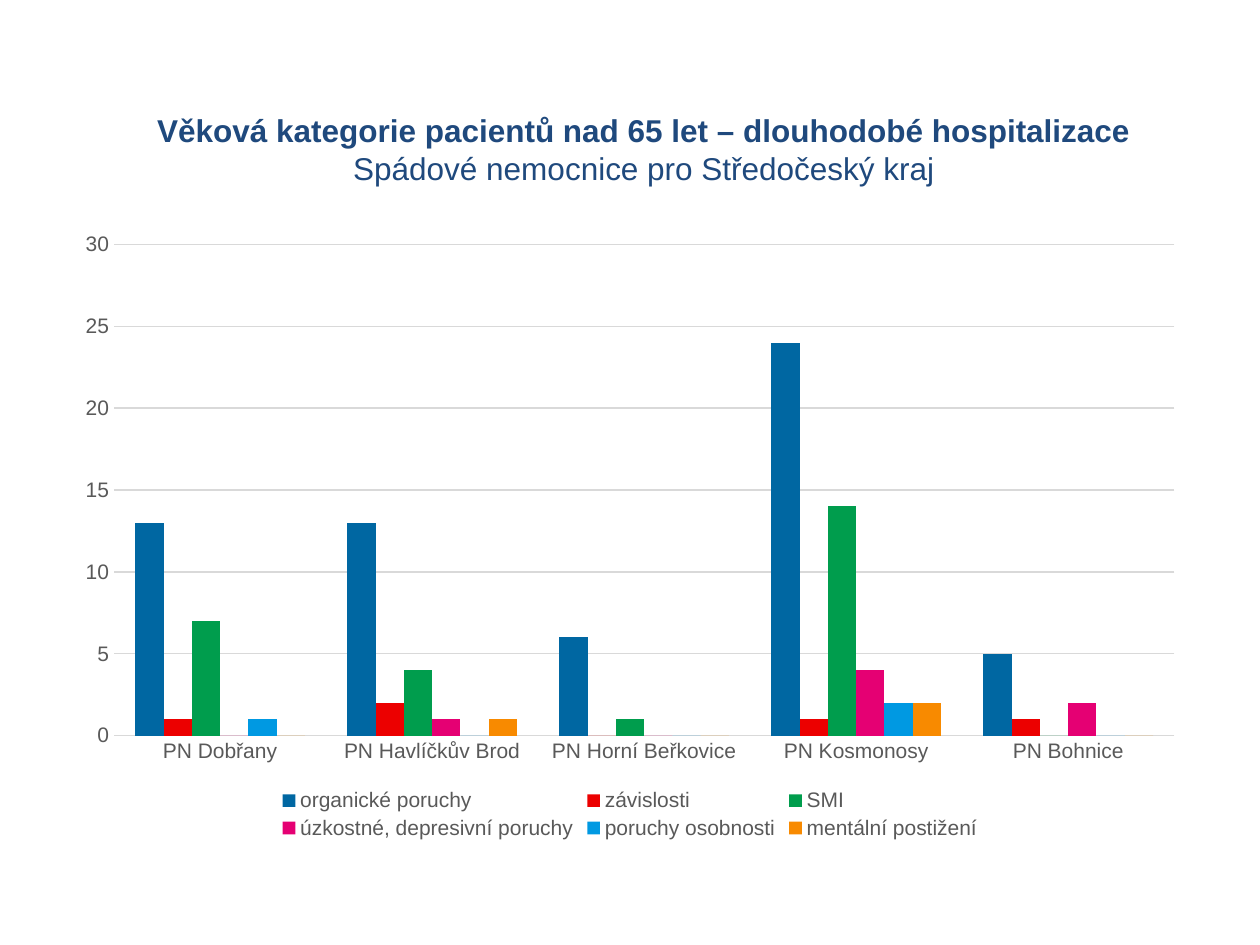
from dataclasses import dataclass

from pptx import Presentation
from pptx import util as u
from pptx.chart.data import CategoryChartData
from pptx.dml.color import RGBColor
from pptx.enum import chart as ch
from pptx.enum import text


@dataclass(frozen=True)
class Theme:
    font: str = "Arial"
    title_color: str = "1F497D"
    label_color: str = "595959"
    grid_color: str = "D9D9D9"
    series_colors: tuple = ("0067A2", "EC0000", "009D4D",
                            "E50073", "0099E2", "F88A00")
    title_size: int = 18
    label_size: int = 12
    grid_width: float = 0.75


HOSPITALS = ["PN Dobřany", "PN Havlíčkův Brod", "PN Horní Beřkovice",
             "PN Kosmonosy", "PN Bohnice"]
PATIENTS = {
    "organické poruchy": (13, 13, 6, 24, 5),
    "závislosti": (1, 2, 0, 1, 1),
    "SMI": (7, 4, 1, 14, 0),
    "úzkostné, depresivní poruchy": (0, 1, 0, 4, 2),
    "poruchy osobnosti": (1, 0, 0, 2, 0),
    "mentální postižení": (0, 1, 0, 2, 0),
}


class SlideBuilder:
    def __init__(self, slide, theme):
        self.slide = slide
        self.theme = theme

    def style_font(self, font, size, color):
        font.name = self.theme.font
        font.size = u.Pt(size)
        font.color.rgb = RGBColor.from_string(color)

    def heading(self, box, headline, subtitle):
        frame = self.slide.shapes.add_textbox(*map(u.Cm, box)).text_frame
        frame.word_wrap = True
        frame.vertical_anchor = text.MSO_ANCHOR.MIDDLE
        heading = frame.paragraphs[0]
        heading.alignment = text.PP_ALIGN.CENTER
        self.style_font(heading.font, self.theme.title_size, self.theme.title_color)
        headline_run = heading.add_run()
        headline_run.text = headline
        headline_run.font.bold = True
        heading.add_line_break()
        heading.add_run().text = subtitle

    def column_chart(self, box, categories, series_values):
        theme = self.theme
        data = CategoryChartData(number_format="0")
        data.categories = categories
        for name, values in series_values.items():
            data.add_series(name, values)
        chart = self.slide.shapes.add_chart(
            ch.XL_CHART_TYPE.COLUMN_CLUSTERED, *map(u.Cm, box), data).chart
        chart.has_title = False
        self.style_font(chart.font, theme.label_size, theme.label_color)

        # Columns
        plot = chart.plots[0]
        plot.vary_by_categories = False
        plot.gap_width = 150
        plot.overlap = 0
        for series, color in zip(plot.series, theme.series_colors):
            series.format.fill.solid()
            series.format.fill.fore_color.rgb = RGBColor.from_string(color)
            series.invert_if_negative = False

        # Axes and gridlines
        for axis in (chart.category_axis, chart.value_axis):
            axis.major_tick_mark = axis.minor_tick_mark = ch.XL_TICK_MARK.NONE
            axis.format.line.fill.background()
            self.style_font(axis.tick_labels.font, theme.label_size, theme.label_color)
        patients_axis = chart.value_axis
        patients_axis.minimum_scale = 0
        patients_axis.maximum_scale = 30
        patients_axis.major_unit = 5
        patients_axis.has_major_gridlines = True
        grid = patients_axis.major_gridlines.format.line
        grid.color.rgb = RGBColor.from_string(theme.grid_color)
        grid.width = u.Pt(theme.grid_width)

        # Legend
        chart.has_legend = True
        chart.legend.position = ch.XL_LEGEND_POSITION.BOTTOM
        chart.legend.include_in_layout = False
        self.style_font(chart.legend.font, theme.label_size, theme.label_color)


def main():
    deck = Presentation()
    deck.slide_width, deck.slide_height = u.Cm(25.4), u.Cm(19.05)
    builder = SlideBuilder(deck.slides.add_slide(deck.slide_layouts[6]), Theme())

    # Heading
    builder.heading((1.27, 1.85, 23.42, 2.29),
                    "Věková kategorie pacientů nad 65 let – dlouhodobé hospitalizace",
                    "Spádové nemocnice pro Středočeský kraj")

    # Patients by diagnosis and hospital
    builder.column_chart((1.27, 4.45, 22.86, 12.57), HOSPITALS, PATIENTS)

    deck.save("out.pptx")


if __name__ == "__main__":
    main()
